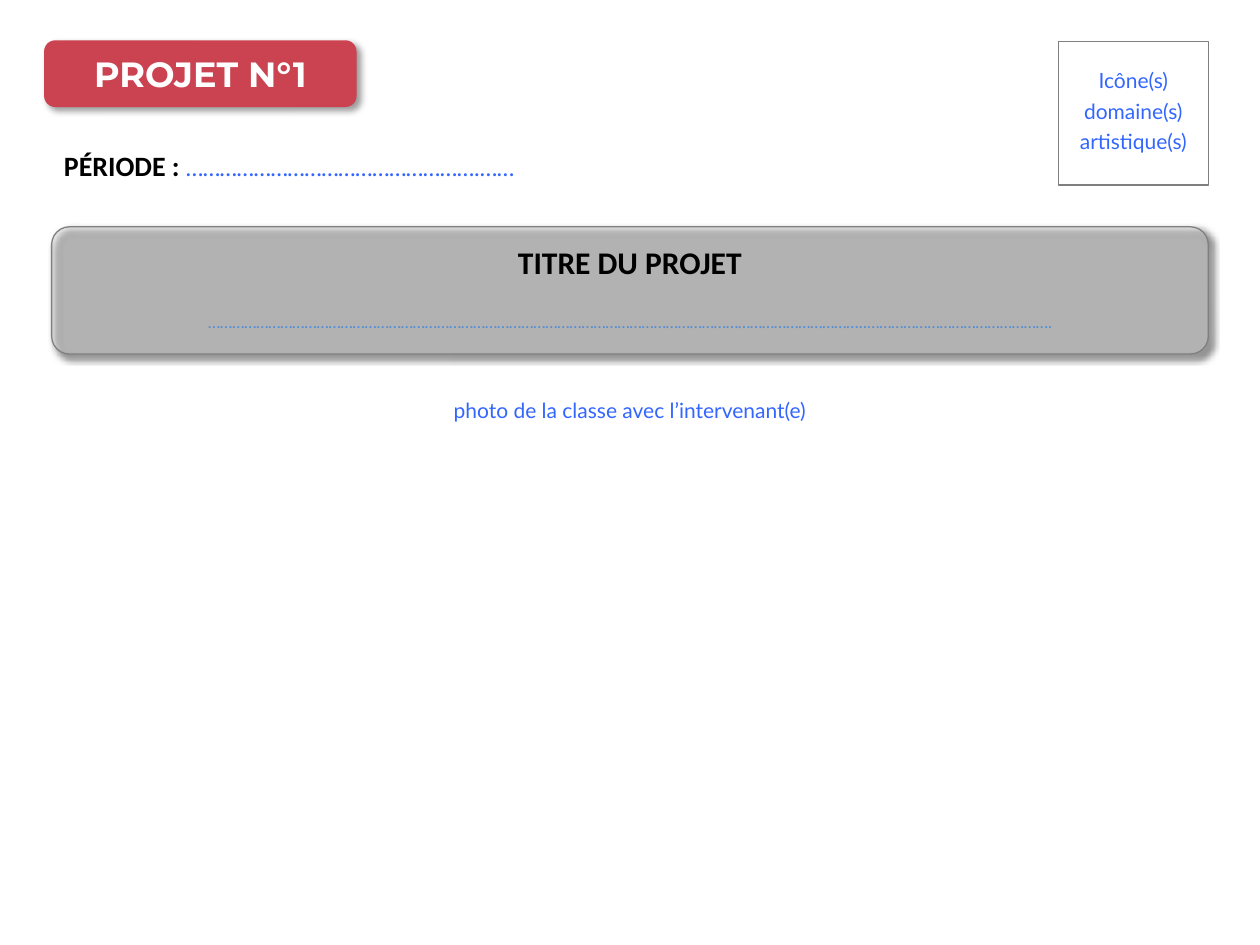
"""Build the opening slide of a class art project."""
import dataclasses
import typing

import lxml.etree
import pptx
import pptx.dml.color
import pptx.enum.shapes
import pptx.enum.text
import pptx.oxml.ns
import pptx.util

RGBColor = pptx.dml.color.RGBColor
BLACK = RGBColor(0x00, 0x00, 0x00)
WHITE = RGBColor(0xFF, 0xFF, 0xFF)
BLUE = RGBColor(0x33, 0x66, 0xFF)
SKY = RGBColor(0x55, 0x8E, 0xD5)
RED = RGBColor(0xCB, 0x42, 0x50)
PALE = RGBColor(0xD9, 0xD9, 0xD9)
GREY = RGBColor(0x7F, 0x7F, 0x7F)

COLS, ROWS = 100, 75
LEFT, WIDE = 4.1, 91.8
SIDE, SPAN = 84, 11.9

ROUND = pptx.enum.shapes.MSO_SHAPE.ROUNDED_RECTANGLE
RECT = pptx.enum.shapes.MSO_SHAPE.RECTANGLE
ALIGN = pptx.enum.text.PP_ALIGN
ANCHOR = pptx.enum.text.MSO_ANCHOR
FIT = pptx.enum.text.MSO_AUTO_SIZE


@dataclasses.dataclass
class Area:
    left: float
    top: float
    wide: float
    high: float


@dataclasses.dataclass
class Run:
    text: str
    size: float
    color: RGBColor
    font: str = "Calibri"
    bold: bool = False


@dataclasses.dataclass
class Para:
    runs: list[Run]
    align: ALIGN = ALIGN.CENTER
    lead: float = 1.2
    gap: float = 0


@dataclasses.dataclass
class Panel:
    area: Area
    kind: RECT = ROUND
    fill: typing.Optional[RGBColor] = None
    alpha: int = 100
    line: typing.Optional[RGBColor] = None
    shade: bool = False
    curve: typing.Optional[float] = None


def place(deck: typing.Any, area: Area) -> tuple[int, ...]:
    """Turn grid columns and rows into slide lengths."""
    col, row = deck.slide_width / COLS, deck.slide_height / ROWS
    return tuple(round(part) for part in (area.left * col, area.top * row, area.wide * col, area.high * row))


def node(root: typing.Any, tag: str, **attrs: str) -> typing.Any:
    """Add a drawing element below the given root."""
    return lxml.etree.SubElement(root, pptx.oxml.ns.qn(tag), attrs)


def cast(shape: typing.Any) -> None:
    """Give a shape a soft shadow to the lower right."""
    list_el = shape.element.spPr.find(pptx.oxml.ns.qn("a:effectLst"))
    outer = node(list_el, "a:outerShdw", blurRad=str(pptx.util.Pt(4)), dist=str(pptx.util.Pt(3)),
                 dir="2700000", algn="tl", rotWithShape="0")
    node(node(outer, "a:srgbClr", val="000000"), "a:alpha", val="40000")


def draw(deck: typing.Any, slide: typing.Any, panel: Panel) -> typing.Any:
    """Draw one panel with its fill, line and shadow."""
    shape = slide.shapes.add_shape(panel.kind, *place(deck, panel.area))
    shape.shadow.inherit = False
    if panel.curve is not None:
        shape.adjustments[0] = panel.curve
    if panel.fill is None:
        shape.fill.background()
    else:
        shape.fill.solid()
        shape.fill.fore_color.rgb = panel.fill
        if panel.alpha < 100:
            tint = shape.element.spPr.find(".//" + pptx.oxml.ns.qn("a:srgbClr"))
            node(tint, "a:alpha", val=str(panel.alpha * 1000))
    if panel.line is None:
        shape.line.fill.background()
    else:
        shape.line.color.rgb = panel.line
        shape.line.width = pptx.util.Pt(0.75)
    if panel.shade:
        cast(shape)
    return shape


def write(shape: typing.Any, paras: list[Para], anchor: ANCHOR = ANCHOR.TOP) -> None:
    """Fill a shape with paragraphs, run by run."""
    frame = shape.text_frame
    frame.word_wrap = True
    frame.vertical_anchor = anchor
    for step, para in enumerate(paras):
        line = frame.add_paragraph() if step else frame.paragraphs[0]
        line.alignment = para.align
        line.line_spacing = para.lead
        line.space_before = pptx.util.Pt(para.gap)
        for part in para.runs:
            run = line.add_run()
            run.text = part.text
            run.font.name = part.font
            run.font.size = pptx.util.Pt(part.size)
            run.font.bold = part.bold
            run.font.color.rgb = part.color


def label(deck: typing.Any, slide: typing.Any, area: Area, paras: list[Para]) -> None:
    """Add a text box that grows with its text."""
    box = slide.shapes.add_textbox(*place(deck, area))
    write(box, paras)
    box.text_frame.auto_size = FIT.SHAPE_TO_FIT_TEXT


def head(deck: typing.Any, slide: typing.Any, area: Area, paras: list[Para]) -> None:
    """Move the title in front of its panel and fill it."""
    title = slide.shapes.title
    title.left, title.top, title.width, title.height = place(deck, area)
    slide.shapes.element.append(title.element)
    write(title, paras)
    title.text_frame.auto_size = FIT.SHAPE_TO_FIT_TEXT


def main() -> None:
    """Build and save the slide."""
    deck = pptx.Presentation()
    deck.slide_width, deck.slide_height = pptx.util.Inches(10), pptx.util.Inches(7.5)
    slide = deck.slides.add_slide(deck.slide_layouts[5])

    draw(deck, slide, Panel(Area(LEFT, 18, WIDE, 10.1), fill=PALE, alpha=40, line=GREY, shade=True, curve=0.14))
    label(deck, slide, Area(LEFT, 30.7, WIDE, 3.4),
          [Para([Run("photo de la classe avec l’intervenant(e)", 12, BLUE, "Lato")])])
    head(deck, slide, Area(LEFT, 18.2, WIDE, 8.6), [
        Para([Run("TITRE DU PROJET", 18, BLACK, bold=True)]),
        Para([Run("………………………………………………………………………………………………………………………………………………..……………………………………….", 10, SKY)],
             gap=14.6),
    ])
    badge = draw(deck, slide, Panel(Area(3.5, 3.2, 24.8, 5.3), fill=RED, shade=True))
    write(badge, [Para([Run("PROJET N°1", 20, WHITE, "Montserrat", True)], lead=1)], ANCHOR.MIDDLE)
    label(deck, slide, Area(LEFT, 11.3, 63.7, 3.7), [
        Para([Run("PÉRIODE : ", 16, BLACK, bold=True), Run("…………………………………………….……", 14, BLUE)],
             ALIGN.LEFT, 1),
    ])
    draw(deck, slide, Panel(Area(SIDE, 3.3, SPAN, 11.4), RECT, line=GREY))
    label(deck, slide, Area(SIDE, 4.5, SPAN, 8.2),
          [Para([Run("Icône(s) domaine(s) artistique(s)", 12, BLUE, "Lato")])])
    deck.save("out.pptx")


if __name__ == "__main__":
    main()
